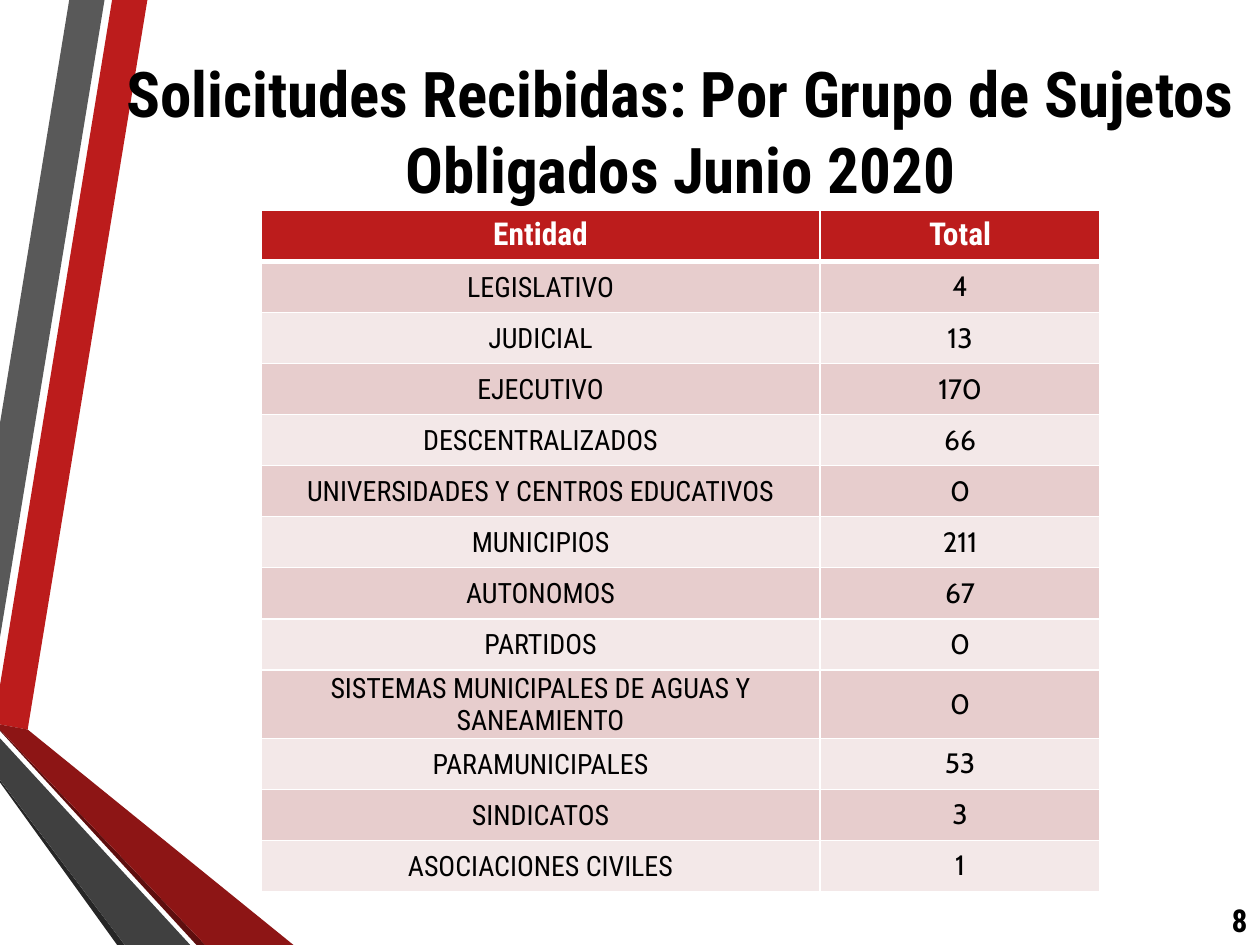
from lxml.etree import SubElement
from pptx import Presentation
from pptx.dml.color import RGBColor
from pptx.enum.text import MSO_ANCHOR, PP_ALIGN
from pptx.oxml.ns import qn
from pptx.util import Inches, Pt

COLORS = {
    "red": "BC1C1C", "gray": "595959", "charcoal": "404040", "coal": "262626",
    "maroon": "8D1515", "wine": "5E0E0E", "band_dark": "E7CDCD",
    "band_light": "F3E8E8", "white": "FFFFFF", "black": "000000",
}
HEADING_FONT = "Roboto Condensed"
NUMBER_FONT = "Cabin"

RIBBONS = [
    ("red", [(0, 5.44), (0, 5.75), (0.22, 5.79), (1.17, 0), (0.89, 0)]),
    ("gray", [(0.83, 0), (0.55, 0), (0, 3.36), (0, 5.06)]),
    ("coal", [(0, 6.19), (0, 6.21), (0.93, 7.5), (0.99, 7.5)]),
    ("wine", [(0, 5.79), (0, 5.8), (1.56, 7.5), (1.63, 7.5)]),
    ("maroon", [(0, 5.79), (1.63, 7.5), (2.33, 7.5), (0.22, 5.79), (0, 5.75)]),
    ("charcoal", [(0, 6.19), (0.99, 7.5), (1.51, 7.5), (0, 5.86)]),
]

HEADERS = ("Entidad", "Total")
REQUESTS = [
    ("LEGISLATIVO", 4),
    ("JUDICIAL", 13),
    ("EJECUTIVO", 170),
    ("DESCENTRALIZADOS", 66),
    ("UNIVERSIDADES Y CENTROS EDUCATIVOS", 0),
    ("MUNICIPIOS", 211),
    ("AUTONOMOS", 67),
    ("PARTIDOS", 0),
    ("SISTEMAS MUNICIPALES DE AGUAS Y SANEAMIENTO", 0),
    ("PARAMUNICIPALES", 53),
    ("SINDICATOS", 3),
    ("ASOCIACIONES CIVILES", 1),
]
COLUMN_WIDTHS = (4.44, 2.22)
TABLE_HEIGHT = 5.27

HEADER_FORMAT = {"name": HEADING_FONT, "size": Pt(18), "bold": True}
ENTITY_FORMAT = {"name": HEADING_FONT, "size": Pt(16), "bold": False}
TOTAL_FORMAT = {"name": NUMBER_FONT, "size": Pt(16), "bold": False}
TITLE_FORMAT = {"name": HEADING_FONT, "size": Pt(36), "bold": True}
ENTITY_MARGINS = {
    "margin_left": Inches(0.01), "margin_top": Inches(0.01),
    "margin_right": Inches(0.01), "margin_bottom": 0,
}


def color(name):
    return RGBColor.from_string(COLORS[name])


def set_attributes(target, values):
    for name, value in values.items():
        setattr(target, name, value)


def write_lines(frame, lines, text_format, color_name, alignment=PP_ALIGN.CENTER):
    """Write one paragraph whose lines are parted by line breaks."""
    paragraph = frame.paragraphs[0]
    paragraph.alignment = alignment
    for index, line in enumerate(lines):
        if index:
            paragraph.add_line_break()
        run = paragraph.add_run()
        run.text = line
        set_attributes(run.font, text_format)
        run.font.color.rgb = color(color_name)


def add_ribbon(slide, color_name, points):
    start, *others = [(Inches(x), Inches(y)) for x, y in points]
    builder = slide.shapes.build_freeform(*start)
    builder.add_line_segments(others, close=True)
    shape = builder.convert_to_shape()
    shape.shadow.inherit = False
    shape.fill.solid()
    shape.fill.fore_color.rgb = color(color_name)
    shape.line.fill.background()


def add_text(slide, bounds, lines, text_format, alignment):
    box = slide.shapes.add_textbox(*map(Inches, bounds))
    frame = box.text_frame
    set_attributes(frame, {"word_wrap": True, "vertical_anchor": MSO_ANCHOR.MIDDLE})
    write_lines(frame, lines, text_format, "black", alignment)


def add_borders(cell, widths):
    """Draw white cell borders; widths maps a side to points."""
    properties = cell._tc.get_or_add_tcPr()
    for side, width in widths.items():
        line = SubElement(properties, qn(f"a:ln{side}"), w=str(Pt(width)))
        fill = SubElement(line, qn("a:solidFill"))
        SubElement(fill, qn("a:srgbClr"), val=COLORS["white"])


def fill_cell(cell, text, text_format, text_color, fill_color, borders):
    add_borders(cell, borders)
    cell.fill.solid()
    cell.fill.fore_color.rgb = color(fill_color)
    write_lines(cell.text_frame, [text], text_format, text_color)


def add_requests_table(slide):
    row_count = len(REQUESTS) + 1
    frame = slide.shapes.add_table(
        row_count, len(HEADERS), Inches(2.07), Inches(1.67),
        Inches(sum(COLUMN_WIDTHS)), Inches(TABLE_HEIGHT))
    table = frame.table
    for column, width in zip(table.columns, COLUMN_WIDTHS):
        column.width = Inches(width)
    for row in table.rows:
        row.height = Inches(TABLE_HEIGHT / row_count)

    for column, header in enumerate(HEADERS):
        fill_cell(table.cell(0, column), header, HEADER_FORMAT, "white", "red",
                  {"L": 1, "R": 1, "T": 1, "B": 3})
    for row, request in enumerate(REQUESTS, start=1):
        band = "band_dark" if row % 2 else "band_light"
        borders = {"L": 1, "R": 1, "T": 3 if row == 1 else 1, "B": 1}
        for column, text_format in enumerate((ENTITY_FORMAT, TOTAL_FORMAT)):
            cell = table.cell(row, column)
            cell.vertical_anchor = MSO_ANCHOR.MIDDLE
            fill_cell(cell, str(request[column]), text_format, "black", band, borders)
        set_attributes(table.cell(row, 0), ENTITY_MARGINS)


def main():
    presentation = Presentation()
    presentation.slide_width = Inches(10)
    presentation.slide_height = Inches(7.5)
    slide = presentation.slides.add_slide(presentation.slide_layouts[6])
    for color_name, points in RIBBONS:
        add_ribbon(slide, color_name, points)
    add_text(slide, (9.53, 7.1, 0.47, 0.4), ["8"], HEADER_FORMAT, PP_ALIGN.RIGHT)
    add_requests_table(slide)
    add_text(slide, (0.65, 0.67, 9.5, 0.73),
             ["Solicitudes Recibidas: Por Grupo de Sujetos", "Obligados Junio 2020"],
             TITLE_FORMAT, PP_ALIGN.CENTER)
    presentation.save("out.pptx")


if __name__ == "__main__":
    main()
